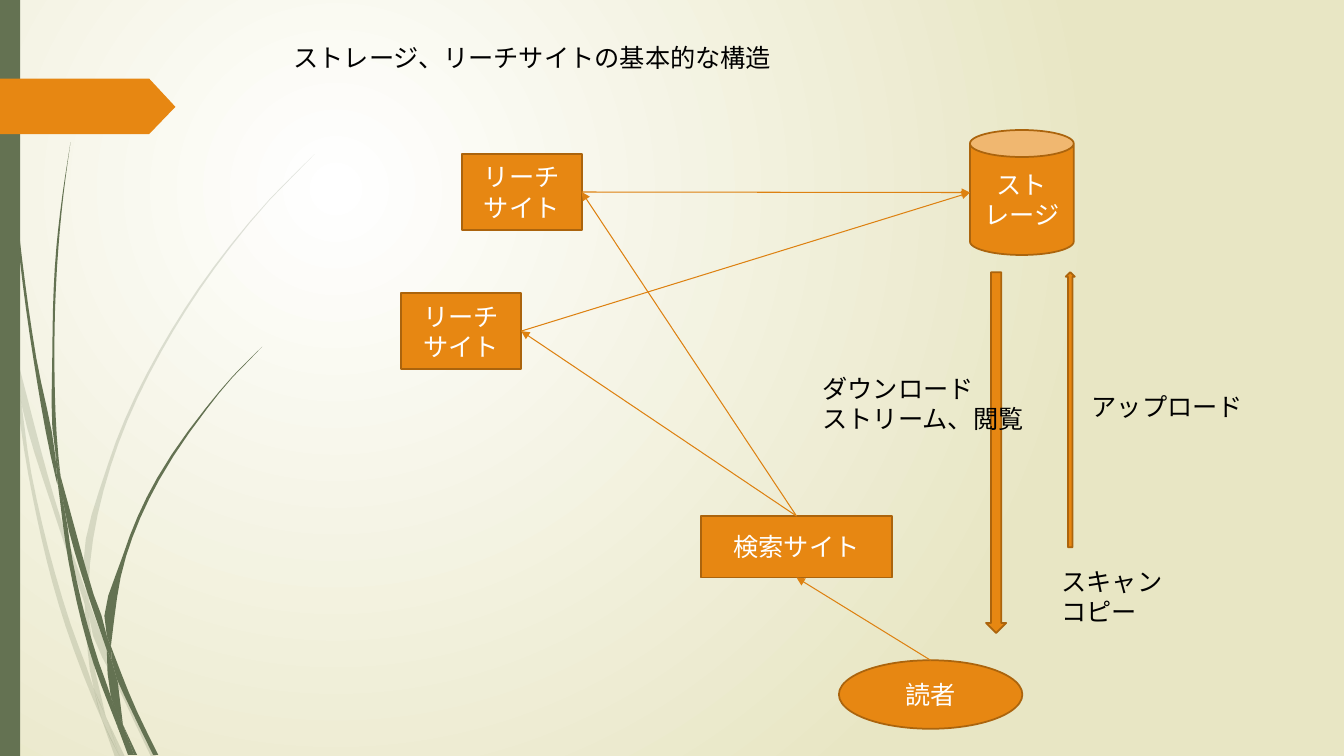
from math import ceil

from lxml import etree
from pptx import Presentation
from pptx.dml.color import RGBColor
from pptx.enum.shapes import MSO_CONNECTOR, MSO_SHAPE
from pptx.enum.text import MSO_ANCHOR, PP_ALIGN
from pptx.oxml.ns import qn
from pptx.util import Inches, Pt

RECT, CAN, OVAL = MSO_SHAPE.RECTANGLE, MSO_SHAPE.CAN, MSO_SHAPE.OVAL
DOWN, UP = MSO_SHAPE.DOWN_ARROW, MSO_SHAPE.UP_ARROW
STRAIGHT = MSO_CONNECTOR.STRAIGHT
TOP, MIDDLE = MSO_ANCHOR.TOP, MSO_ANCHOR.MIDDLE
LEFT, CENTER = PP_ALIGN.LEFT, PP_ALIGN.CENTER

FONT = "League Spartan"
COLORS = {"white": "FFFFFF", "cream": "E8E6C4", "green": "647252",
          "orange": "E78712", "edge": "AB640D", "link": "DD8111", "black": "000000"}

PALE = [
    ([(0, 2.99), (.1, 3.44), (.11, 3.5)], [(0, 2.82), (.09, 3.22), (.11, 3.5)]),
    ([(.14, 3.45), (.17, 3.76), (.58, 5.22), (.84, 5.99)],
     [(.14, 3.45), (.62, 5.2), (.85, 5.86)]),
    ([(.88, 5.96), (.88, 6.1), (1.23, 6.94), (1.5, 7.51)],
     [(.88, 5.96), (.92, 6.07), (1.27, 6.92), (1.55, 7.51)]),
    ([(1.05, 7.11), (1.19, 7.51)], [(1.05, 7.11), (1.24, 7.51)]),
    ([(.11, 3.5), (.28, 4.7), (.65, 6.21), (.92, 6.93), (1.01, 7.14)],
     [(.11, 3.5), (.17, 3.76), (.31, 4.69), (.7, 6.19), (.93, 6.83), (1.01, 7.14)]),
    ([(.84, 5.99), (.87, 6.46), (.93, 6.83), (1.05, 7.11)],
     [(.84, 5.99), (.88, 6.1), (.91, 6.46), (1.05, 7.11)]),
    ([(3.12, 1.53), (2.68, 1.97), (2.28, 2.44), (1.58, 3.48), (1.07, 4.61),
      (.85, 5.84), (.88, 5.96)],
     [(3.12, 1.54), (2.68, 1.98), (2.29, 2.45), (1.6, 3.49), (1.1, 4.62),
      (.88, 5.84), (.88, 5.96)]),
    ([(1.01, 7.14), (1.14, 7.51)], [(1.01, 7.14), (1.19, 7.51)]),
    ([(.85, 5.86), (.84, 5.99), (.88, 6.1)], [(.85, 5.86), (.88, 5.96), (.88, 6.1)]),
    ([(.93, 6.83), (1.01, 7.14), (1.19, 7.51)], [(.93, 6.83), (1.05, 7.11), (1.19, 7.51)]),
]
DARK = [
    ([(.03, 0), (.07, 1.1), (.17, 2.33), (.33, 3.55), (.56, 4.77), (.57, 4.81)],
     [(.04, 0), (.08, 1.09), (.19, 2.32), (.36, 3.55), (.55, 4.53), (.57, 4.81)]),
    ([(.6, 4.72), (.64, 5.05), (.88, 5.92), (1.06, 6.45)],
     [(.6, 4.72), (.93, 5.9), (1.06, 6.31), (1.06, 6.45)]),
    ([(1.1, 6.41), (1.11, 6.56), (1.32, 7.08), (1.52, 7.49)],
     [(1.1, 6.41), (1.13, 6.49), (1.36, 7.06), (1.57, 7.49)]),
    ([(.57, 4.77), (.68, 5.57), (.93, 6.59), (1.17, 7.22)],
     [(.57, 4.77), (.64, 5.05), (.72, 5.56), (.98, 6.57), (1.1, 6.91), (1.17, 7.22)]),
    ([(.7, 1.41), (.62, 1.93), (.56, 2.45), (.52, 3.49), (.55, 4.49), (.6, 4.72)],
     [(.7, 1.41), (.63, 1.93), (.58, 2.45), (.54, 3.49), (.58, 4.53), (.6, 4.72)]),
    ([(1.22, 7.19), (1.33, 7.49)], [(1.22, 7.19), (1.36, 7.49)]),
    ([(.55, 4.49), (.57, 4.77), (.64, 5.05)], [(.55, 4.49), (.6, 4.72), (.64, 5.05)]),
    ([(2.6, 3.44), (2.31, 3.73), (2.04, 4.05), (1.56, 4.74), (1.22, 5.51),
      (1.06, 6.31), (1.1, 6.41)],
     [(2.61, 3.44), (2.31, 3.74), (2.05, 4.06), (1.58, 4.76), (1.25, 5.52),
      (1.11, 6.33), (1.1, 6.41)]),
    ([(1.17, 7.22), (1.27, 7.49)], [(1.17, 7.22), (1.31, 7.49)]),
    ([(1.06, 6.45), (1.1, 6.91), (1.22, 7.19)], [(1.06, 6.45), (1.11, 6.56), (1.22, 7.19)]),
    ([(1.06, 6.31), (1.06, 6.45), (1.11, 6.56)], [(1.06, 6.31), (1.1, 6.41), (1.11, 6.56)]),
    ([(1.1, 6.91), (1.17, 7.22), (1.3, 7.49)], [(1.1, 6.91), (1.22, 7.19), (1.33, 7.49)]),
]
BANNER = [(0, 0), (1.48, 0), (1.74, .28), (1.48, .55), (0, .55)]


def color(name):
    return RGBColor.from_string(COLORS[name])


def paint(shape, fill, edge=None):
    shape.shadow.inherit = False
    shape.fill.solid()
    shape.fill.fore_color.rgb = color(fill)
    if edge:
        shape.line.color.rgb = color(edge)
        shape.line.width = Pt(1.25)
    else:
        shape.line.fill.background()


def write(shape, lines, tone, align=LEFT, anchor=TOP):
    frame = shape.text_frame
    frame.word_wrap = True
    frame.vertical_anchor = anchor
    for i, line in enumerate(lines):
        para = frame.add_paragraph() if i else frame.paragraphs[0]
        para.alignment = align
        run = para.add_run()
        run.text = line
        run.font.name = FONT
        run.font.size = Pt(18)
        run.font.color.rgb = color(tone)


def place(slide, kind, x, y, w, h, fill="orange", edge="edge"):
    shape = slide.shapes.add_shape(kind, Inches(x), Inches(y), Inches(w), Inches(h))
    paint(shape, fill, edge)
    return shape


def node(slide, kind, x, y, w, h, text):
    shape = place(slide, kind, x, y, w, h)
    write(shape, [text], "white", CENTER, MIDDLE)
    return shape


def label(slide, x, y, w, h, lines):
    box = slide.shapes.add_textbox(Inches(x), Inches(y), Inches(w), Inches(h))
    write(box, lines, "black")


def side(shape, n):
    x, y, w, h = shape.left, shape.top, shape.width, shape.height
    return [(x + w // 2, y), (x, y + h // 2), (x + w // 2, y + h), (x + w, y + h // 2)][n]


def link(slide, start, out, goal, into):
    line = slide.shapes.add_connector(STRAIGHT, *side(start, out), *side(goal, into))
    if start.auto_shape_type == RECT:
        line.begin_connect(start, out)
    if goal.auto_shape_type == RECT:
        line.end_connect(goal, into)
    line.line.color.rgb = color("link")
    line.line.width = Pt(0.75)
    etree.SubElement(line.line._get_or_add_ln(), qn("a:tailEnd"), type="triangle")
    etree.SubElement(line._element.spPr, qn("a:effectLst"))


def curve(edge):
    gaps = [b[1] - a[1] for a, b in zip(edge, edge[1:])]
    rates = [(b[0] - a[0]) / gap for a, b, gap in zip(edge, edge[1:], gaps)]
    slopes = [rates[0]]
    for i in range(1, len(gaps)):
        mix = rates[i - 1] * gaps[i] + rates[i] * gaps[i - 1]
        slopes.append(mix / (gaps[i - 1] + gaps[i]))
    slopes.append(rates[-1])
    dots = [edge[0]]
    for i, gap in enumerate(gaps):
        (xa, ya), xb = edge[i], edge[i + 1][0]
        steps = ceil(gap * 4)
        for k in range(1, steps + 1):
            t = k / steps
            bend = 3 * t ** 2 - 2 * t ** 3
            pull = slopes[i] * t * (1 - t) ** 2 - slopes[i + 1] * t ** 2 * (1 - t)
            dots.append((xa + (xb - xa) * bend + gap * pull, ya + gap * t))
    return dots


def outline(slide, x, y, dots, fill):
    dots = [(Inches(x + px), Inches(y + py)) for px, py in dots]
    pen = slide.shapes.build_freeform(*dots[0])
    pen.add_line_segments(dots[1:], close=True)
    shape = pen.convert_to_shape()
    paint(shape, fill)
    return shape


def grass(slide, x, y, blades, alpha=None):
    for near, far in blades:
        blade = outline(slide, x, y, curve(near) + curve(far)[:0:-1], "green")
        if alpha:
            tint = blade._element.spPr.find(".//" + qn("a:srgbClr"))
            etree.SubElement(tint, qn("a:alpha"), val=str(alpha * 1000))


def backdrop(slide):
    fill = slide.background.fill
    fill.gradient()
    for stop, name in zip(fill.gradient_stops, ("white", "cream")):
        stop.color.rgb = color(name)
    grad = slide.background._cSld.find(".//" + qn("a:gradFill"))
    grad.remove(grad.find(qn("a:lin")))
    ring = etree.SubElement(grad, qn("a:path"), path="circle")
    etree.SubElement(ring, qn("a:fillToRect"), l="50000", t="50000", r="100000", b="100000")


def margin(slide, x, y):
    grass(slide, x, y, PALE, 20)
    grass(slide, x, y, DARK)
    place(slide, RECT, x, y, 0.2, 7.5, "green", None)
    outline(slide, x, y + 0.78, BANNER, "orange")


def heading(slide, x, y, w, h):
    title = slide.shapes.title
    title.left, title.top, title.width, title.height = map(Inches, (x, y, w, h))
    write(title, ["ストレージ、リーチサイトの基本的な構造"], "black")


def sites(slide, x, y):
    high = node(slide, RECT, x + 0.6, y + 0.24, 1.19, 0.75, "リーチサイト")
    store = node(slide, CAN, x + 5.64, y, 1.03, 1.24, "ストレージ")
    store.adjustments[0] = 0.26
    low = node(slide, RECT, x, y + 1.62, 1.19, 0.75, "リーチサイト")
    search = node(slide, RECT, x + 2.97, y + 3.83, 1.9, 0.61, "検索サイト")
    reader = node(slide, OVAL, x + 4.34, y + 5.26, 1.82, 0.68, "読者")
    for ends in ((reader, 0, search, 2), (search, 0, low, 3), (search, 0, high, 3),
                 (high, 3, store, 1), (low, 3, store, 1)):
        link(slide, *ends)


def traffic(slide, x, y):
    place(slide, DOWN, x + 1.72, y, 0.2, 3.58)
    place(slide, UP, x + 2.51, y, 0.09, 2.73)
    label(slide, x + 2.37, y + 2.87, 1.45, 0.71, ["スキャン", "コピー"])
    label(slide, x + 2.67, y + 1.13, 1.85, 0.4, ["アップロード"])
    label(slide, x, y + 0.95, 2.22, 0.71, ["ダウンロード", "ストリーム、閲覧"])


def main():
    deck = Presentation()
    deck.slide_width, deck.slide_height = Inches(13.33), Inches(7.5)
    slide = deck.slides.add_slide(deck.slide_layouts[5])
    backdrop(slide)
    margin(slide, 0, 0)
    heading(slide, 2.81, 0.37, 5.51, 0.4)
    sites(slide, 3.98, 1.29)
    traffic(slide, 8.06, 2.7)
    deck.save("out.pptx")


if __name__ == "__main__":
    main()
